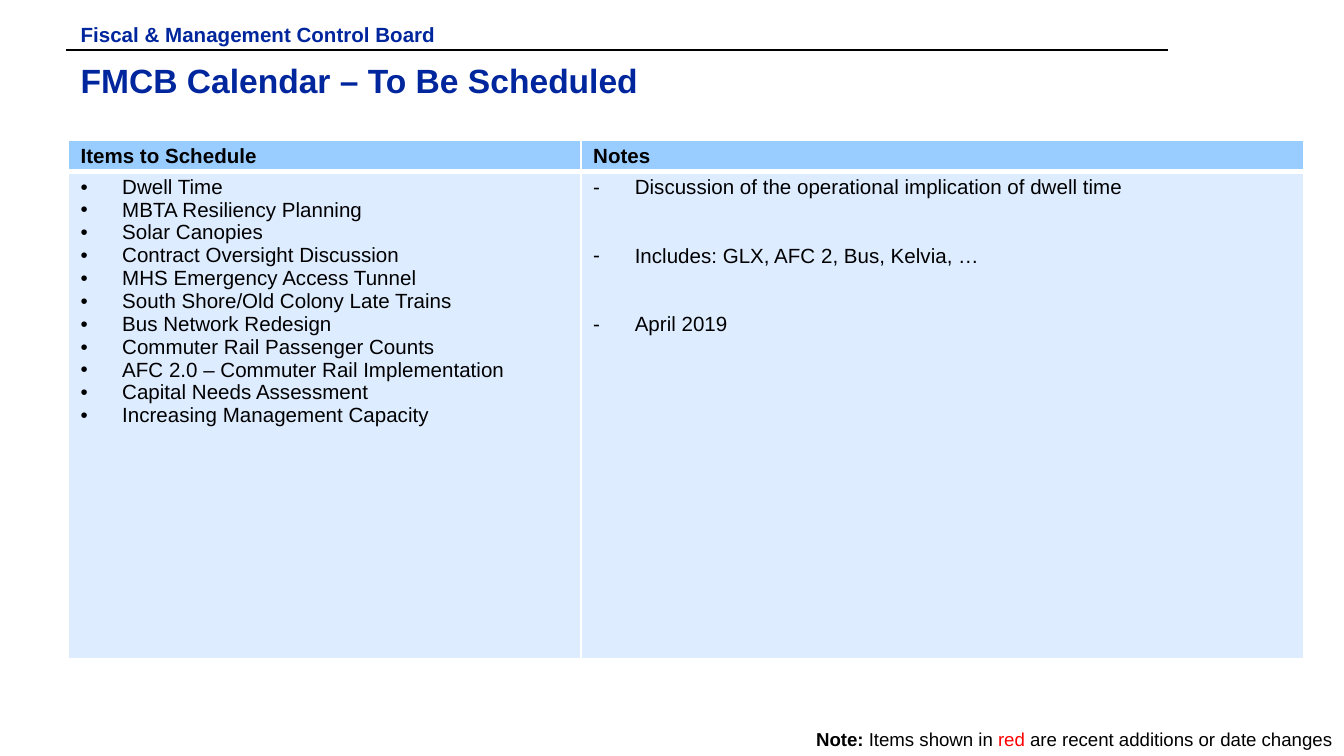
from dataclasses import dataclass

from lxml import etree
from pptx import Presentation, util as u
from pptx.dml.color import RGBColor
from pptx.enum import shapes, text
from pptx.oxml.ns import qn


@dataclass(frozen=True)
class Theme:
    font: str = "Arial"
    navy: str = "00269E"
    ink: str = "000000"
    red: str = "FF0000"
    white: str = "FFFFFF"
    head: str = "99CCFF"
    body: str = "DEECFF"
    title: int = 18
    text: int = 11
    note: int = 10


T = Theme()
WIDE = 10
HIGH = WIDE * 9 / 16
ITEMS = [
    "Dwell Time", "MBTA Resiliency Planning", "Solar Canopies",
    "Contract Oversight Discussion", "MHS Emergency Access Tunnel",
    "South Shore/Old Colony Late Trains", "Bus Network Redesign",
    "Commuter Rail Passenger Counts",
    "AFC 2.0 – Commuter Rail Implementation",
    "Capital Needs Assessment", "Increasing Management Capacity",
]
# Each note stands beside the item with the same row number.
NOTES = {
    0: "Discussion of the operational implication of dwell time",
    3: "Includes: GLX, AFC 2, Bus, Kelvia, …",
    6: "April 2019",
}
PITCH = 12.3


def inch(*sizes):
    return [u.Inches(size) for size in sizes]


def write(para, words, size, color=T.ink, bold=False):
    run = para.add_run()
    run.text = words
    look = dict(name=T.font, size=u.Pt(size), bold=bold)
    for key, value in look.items():
        setattr(run.font, key, value)
    run.font.color.rgb = RGBColor.from_string(color)


def inset(frame, side, edge):
    pads = dict(margin_left=side, margin_right=side,
                margin_top=edge, margin_bottom=edge)
    for key, value in pads.items():
        setattr(frame, key, u.Inches(value))


def label(shape, words, size):
    """Put one bold navy line at the top left of the shape."""
    frame = shape.text_frame
    inset(frame, 0.09, 0.04)
    look = dict(word_wrap=True, auto_size=text.MSO_AUTO_SIZE.NONE,
                vertical_anchor=text.MSO_ANCHOR.TOP)
    for key, value in look.items():
        setattr(frame, key, value)
    para = frame.paragraphs[0]
    para.alignment = text.PP_ALIGN.LEFT
    write(para, words, size, T.navy, True)


def banner(slide, left, top, width, height):
    """Kicker, rule and title, one below the other."""
    kick = slide.shapes.add_textbox(
        *inch(left, top, width * 0.41, height * 0.25))
    label(kick, "Fiscal & Management Control Board", T.text)

    rule = top + height * 0.33
    line = slide.shapes.add_connector(
        shapes.MSO_CONNECTOR.STRAIGHT,
        *inch(left - 0.02, rule, left + width * 0.98, rule))
    line.line.width = u.Pt(1)
    line.line.color.rgb = RGBColor.from_string(T.ink)
    etree.SubElement(line.element.spPr, qn("a:effectLst"))

    title = slide.shapes.title
    spot = inch(left, top + height * 0.37, width, height * 0.63)
    for key, value in zip(("left", "top", "width", "height"), spot):
        setattr(title, key, value)
    label(title, "FMCB Calendar – To Be Scheduled", T.title)


def paint(cell, fill, top, base):
    """Border the cell in white, then fill it; the XML needs that order."""
    props = cell._tc.get_or_add_tcPr()
    for side, size in dict(L=1, R=1, T=top, B=base).items():
        edge = etree.SubElement(props, qn(f"a:ln{side}"), w=str(u.Pt(size)))
        solid = etree.SubElement(edge, qn("a:solidFill"))
        etree.SubElement(solid, qn("a:srgbClr"), val=T.white)
    cell.fill.solid()
    cell.fill.fore_color.rgb = RGBColor.from_string(fill)
    inset(cell, 0.09, 0.03)


def bullets(cell, lines, mark):
    """List the lines, leaving room for each row number that is skipped."""
    last = None
    for row, words in lines.items():
        frame = cell.text_frame
        para = frame.paragraphs[0] if last is None else frame.add_paragraph()
        props = para._p.get_or_add_pPr()
        props.set("marL", str(u.Inches(0.31)))
        props.set("indent", str(-u.Inches(0.31)))
        etree.SubElement(props, qn("a:buFont"), typeface=T.font)
        etree.SubElement(props, qn("a:buChar"), char=mark)
        if last is not None:
            para.space_before = u.Pt(PITCH * (row - last - 1))
        write(para, words, T.text)
        last = row


def agenda(slide, left, top, width, height):
    grid = slide.shapes.add_table(2, 2, *inch(left, top, width, height)).table
    grid.first_row = grid.horz_banding = False
    for col, share in zip(grid.columns, (0.415, 0.585)):
        col.width = u.Inches(width * share)
    for row, share in zip(grid.rows, (0.06, 0.94)):
        row.height = u.Inches(height * share)

    lists = (("Items to Schedule", dict(enumerate(ITEMS)), "•"),
             ("Notes", NOTES, "-"))
    for col, (name, lines, mark) in enumerate(lists):
        head, body = grid.cell(0, col), grid.cell(1, col)
        paint(head, T.head, 1, 3)
        paint(body, T.body, 3, 1)
        head.vertical_anchor = text.MSO_ANCHOR.MIDDLE
        write(head.text_frame.paragraphs[0], name, T.text, bold=True)
        bullets(body, lines, mark)


def footnote(slide, left, top, width, height):
    frame = slide.shapes.add_textbox(
        *inch(left, top, width, height)).text_frame
    inset(frame, 0.09, 0.04)
    frame.word_wrap = False
    frame.auto_size = text.MSO_AUTO_SIZE.SHAPE_TO_FIT_TEXT
    para = frame.paragraphs[0]
    para.alignment = text.PP_ALIGN.RIGHT
    write(para, "Note: ", T.note, bold=True)
    write(para, "Items shown in ", T.note)
    write(para, "red", T.note, T.red)
    write(para, " are recent additions or date changes", T.note)


def main():
    deck = Presentation()
    deck.slide_width, deck.slide_height = inch(WIDE, HIGH)
    slide = deck.slides.add_slide(deck.slide_layouts[5])
    left = WIDE * 0.051
    banner(slide, left, HIGH * 0.022, WIDE * 0.835, HIGH * 0.135)
    agenda(slide, left, HIGH * 0.186, WIDE * 0.919, HIGH * 0.685)
    footnote(slide, WIDE * 0.58, HIGH * 0.955, WIDE * 0.42, HIGH * 0.045)
    deck.save("out.pptx")


if __name__ == "__main__":
    main()
